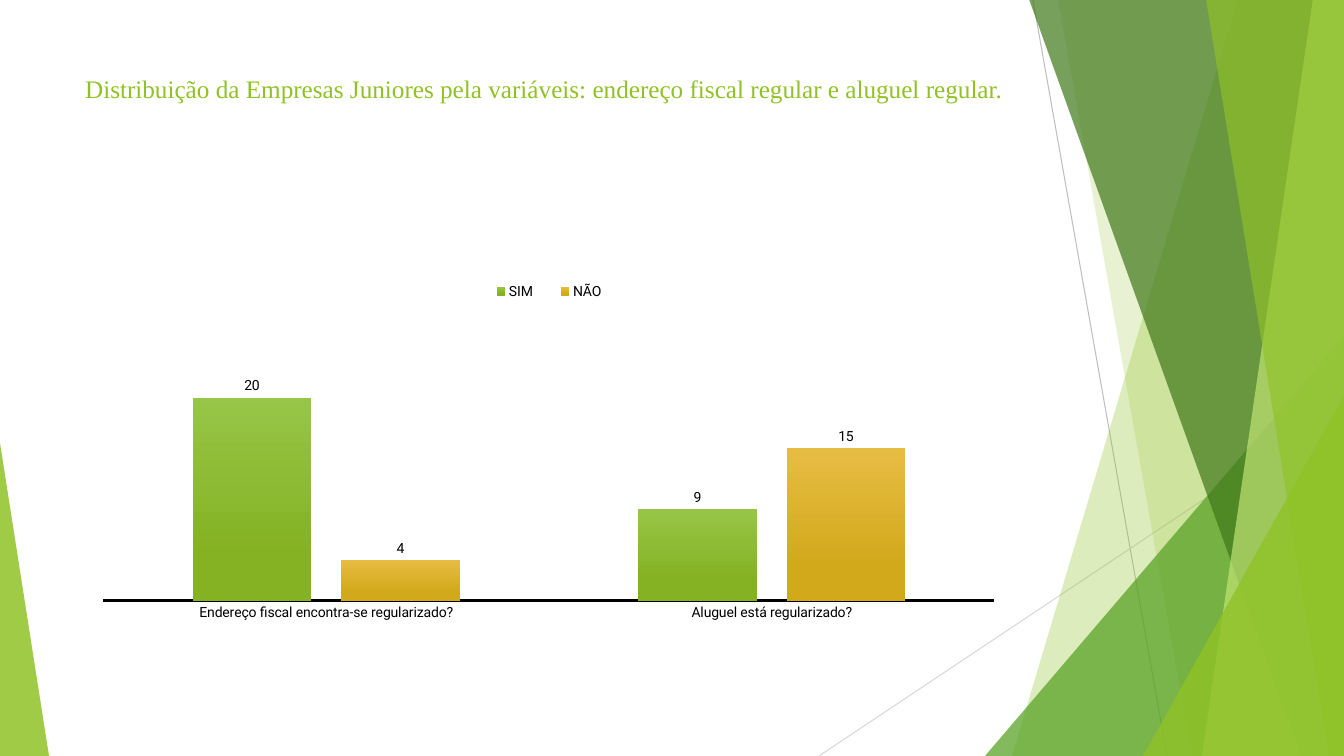
from lxml import etree
from pptx import Presentation
from pptx import util as u
from pptx.chart.data import CategoryChartData
from pptx.dml.color import RGBColor
from pptx.enum import chart as ch, shapes, text
from pptx.oxml import parse_xml
from pptx.oxml.ns import nsdecls, qn

PX = 12192000 / 1344
W, H = 1344, 756
COLORS = {
    "green": "90C226", "mid": "54A021", "dark": "3F7819", "lime": "C0E474",
    "line": "BFBFBF", "pale_line": "D9D9D9", "text": "000000",
    "yes_top": "97C547", "yes_base": "84B223",
    "no_top": "E7BC43", "no_base": "D2A91B",
}


def px(n):
    return u.Emu(round(n * PX))


def rgb(name):
    return RGBColor.from_string(COLORS[name])


def paint(sp, color, opacity):
    sp.shadow.inherit = False
    sp.line.fill.background()
    sp.fill.solid()
    sp.fill.fore_color.rgb = rgb(color)
    clr = sp._element.spPr.find(qn("a:solidFill"))[0]
    etree.SubElement(clr, qn("a:alpha"), val=str(opacity * 1000))


def add_line(s, start, end, color):
    ln = s.shapes.add_connector(
        shapes.MSO_CONNECTOR.STRAIGHT, *map(px, (*start, *end)))
    ln.line.color.rgb = rgb(color)
    ln.line.width = u.Pt(0.75)
    etree.SubElement(ln._element.spPr, qn("a:effectLst"))


def add_band(s, top_x, bottom_x, color, opacity):
    """Fill from a slanted left edge to the right side of the slide."""
    fb = s.shapes.build_freeform(top_x, -1, scale=PX)
    fb.add_line_segments([(W, -1), (W, H), (bottom_x, H)], close=True)
    paint(fb.convert_to_shape(), color, opacity)


def add_corner(s, left, top, width, apex, color, opacity):
    """Triangle standing on the bottom edge of the slide."""
    sp = s.shapes.add_shape(shapes.MSO_SHAPE.ISOSCELES_TRIANGLE,
                            *map(px, (left, top, width, H - top)))
    sp.adjustments[0] = apex
    paint(sp, color, opacity)


def add_facets(s):
    add_line(s, (1033, 0), (1167, H), "line")
    add_line(s, (W, 406), (819, H), "pale_line")
    add_band(s, 1238, 1012, "green", 30)
    add_band(s, 1058, 1192, "green", 20)
    add_corner(s, 985, 336, 359, 1, "mid", 72)
    add_band(s, 1029, 1301, "dark", 70)
    add_band(s, 1313, 1202, "lime", 70)
    add_band(s, 1206, 1329, "green", 65)
    add_corner(s, 1143, 396, 201, 1, "green", 80)
    add_corner(s, 0, 443, 49, 0, "green", 85)


def add_title(s, left, top, width, height):
    sp = s.shapes.title
    sp.left, sp.top, sp.width, sp.height = map(px, (left, top, width, height))
    s.shapes._spTree.append(sp._element)
    tf = sp.text_frame
    tf.text = ("Distribuição da Empresas Juniores pela variáveis: "
               "endereço fiscal regular e aluguel regular.")
    tf.word_wrap = True
    tf.auto_size = text.MSO_AUTO_SIZE.NONE
    tf.vertical_anchor = text.MSO_ANCHOR.TOP
    p = tf.paragraphs[0]
    p.alignment = text.PP_ALIGN.LEFT
    font = p.runs[0].font
    font.name, font.size = "Times New Roman", u.Pt(18)
    font.color.rgb = rgb("green")


def style_font(font):
    font.name, font.size = "Roboto", u.Pt(10)
    font.color.rgb = rgb("text")


def manual_layout(x, y, w, h, inner=False):
    target = '<c:layoutTarget val="inner"/>' if inner else ""
    return parse_xml(
        f'<c:layout {nsdecls("c")}><c:manualLayout>{target}'
        '<c:xMode val="edge"/><c:yMode val="edge"/>'
        f'<c:x val="{x}"/><c:y val="{y}"/><c:w val="{w}"/><c:h val="{h}"/>'
        '</c:manualLayout></c:layout>')


def place(element, layout, index):
    for old in element.findall(qn("c:layout")):
        element.remove(old)
    element.insert(index, layout)


def style_series(series, top, base):
    fill = series.format.fill
    fill.gradient()
    fill.gradient_angle = 270
    for stop, color, position in zip(fill.gradient_stops, (top, base), (0, 0.78)):
        stop.color.rgb = rgb(color)
        stop.position = position
    labels = series.data_labels
    labels.show_value = True
    labels.position = ch.XL_LABEL_POSITION.OUTSIDE_END
    style_font(labels.font)


def add_answers_chart(s, left, top, width, height):
    data = CategoryChartData()
    data.categories = ["Endereço fiscal encontra-se regularizado?",
                       "Aluguel está regularizado?"]
    data.add_series("SIM", (20, 9))
    data.add_series("NÃO", (4, 15))
    chart = s.shapes.add_chart(ch.XL_CHART_TYPE.COLUMN_CLUSTERED,
                               *map(px, (left, top, width, height)), data).chart
    style_font(chart.font)
    chart.has_title = False

    plot = chart.plots[0]
    plot.vary_by_categories = False
    plot.gap_width, plot.overlap = 150, -25
    for series, name in zip(plot.series, ("yes", "no")):
        style_series(series, f"{name}_top", f"{name}_base")

    axis = chart.category_axis
    axis.major_tick_mark = ch.XL_TICK_MARK.NONE
    axis.format.line.color.rgb = rgb("text")
    axis.format.line.width = u.Pt(2)
    style_font(axis.tick_labels.font)
    values = chart.value_axis
    values.minimum_scale, values.maximum_scale = 0, 25
    values.has_major_gridlines = False
    values.visible = False

    chart.has_legend = True
    legend = chart.legend
    legend.position = ch.XL_LEGEND_POSITION.TOP
    legend.include_in_layout = False
    style_font(legend.font)
    place(legend._element, manual_layout(0.42, 0.09, 0.16, 0.07), 1)
    area = chart._chartSpace.chart.plotArea
    place(area, manual_layout(0.03, 0.255, 0.94, 0.595, inner=True), 0)


def main():
    prs = Presentation()
    prs.slide_width, prs.slide_height = px(W), px(H)
    s = prs.slides.add_slide(prs.slide_layouts[5])
    add_facets(s)
    add_title(s, 75, 68, 948, 114)
    add_answers_chart(s, 75, 238, 948, 427)
    prs.save("out.pptx")


if __name__ == "__main__":
    main()
